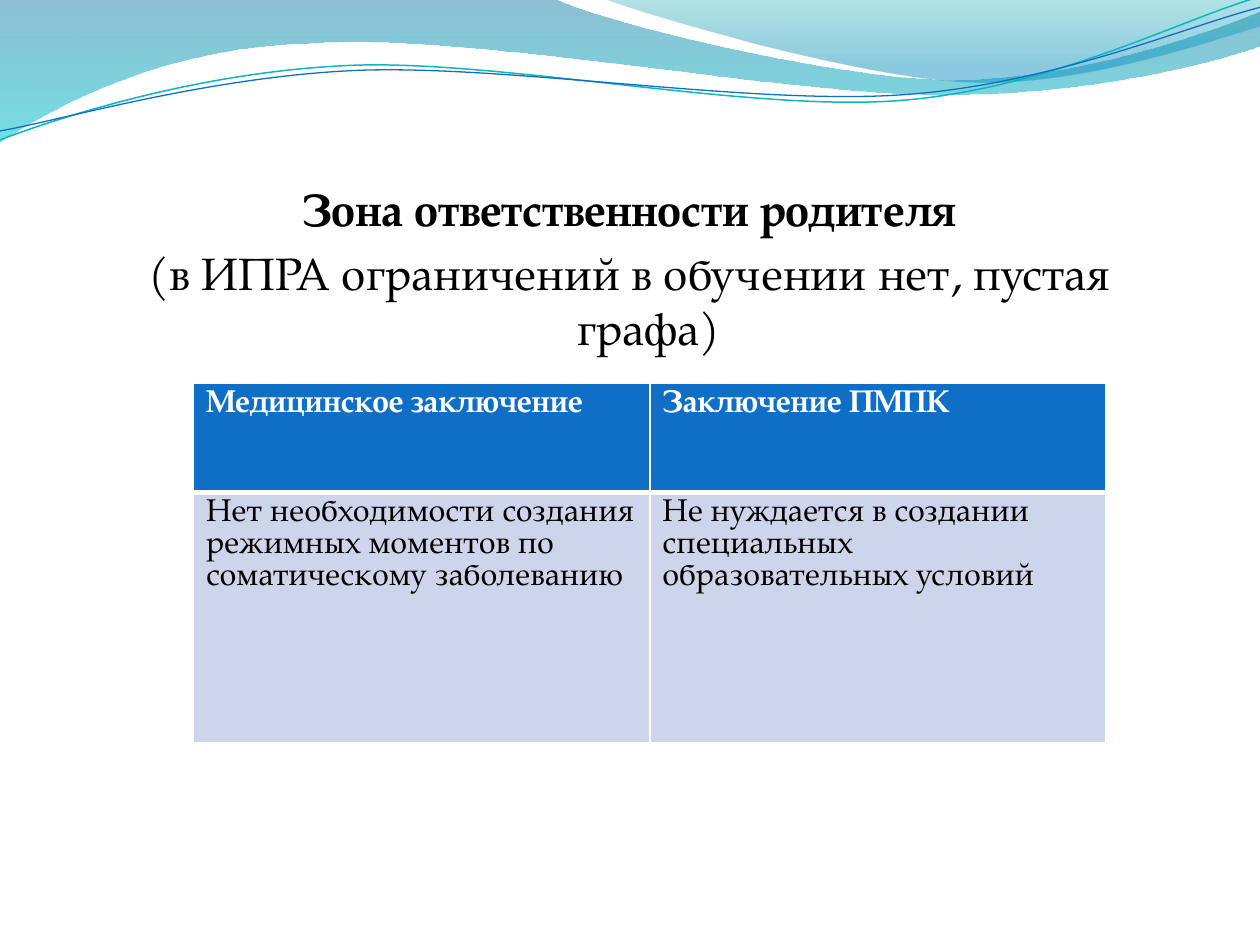
"""Build a slide on the parent's area of responsibility with a two-column table."""
import pptx
import pptx.dml.color
import pptx.enum.text
import pptx.oxml
import pptx.oxml.ns
import pptx.util

Cm = pptx.util.Cm
Pt = pptx.util.Pt
FONT = "TeX Gyre Pagella"
NAMESPACE = pptx.oxml.ns.nsdecls("a")


def color(hex_string):
    return pptx.dml.color.RGBColor.from_string(hex_string)


def style_text(para, size, hex_string, bold):
    for span in para.runs:
        span.font.name = FONT
        span.font.size = Pt(size)
        span.font.bold = bold
        span.font.color.rgb = color(hex_string)


deck = pptx.Presentation()
deck.slide_width = Cm(25.4)
deck.slide_height = Cm(19.05)
page = deck.slides.add_slide(deck.slide_layouts[1])
title = page.shapes.title
title.element.getparent().remove(title.element)

# Each segment holds one point for a straight line or three for a Bezier curve.
band = [
    [(0, 0)],
    [(11.18, -0.03)],
    [(12.09, 0.43), (16.87, 1.6), (19.25, 1.6)],
    [(21.67, 1.6), (24.33, 0.66), (25.4, 0.23)],
    [(25.43, 0.91)],
    [(24.97, 1.12), (22.1, 1.93), (18.95, 1.91)],
    [(15.8, 1.91), (9.7, 0.71), (6.53, 0.86)],
    [(3.28, 0.91), (1.17, 2.11), (-0.03, 2.87)],
]
corner = [
    [(12.17, -0.03)],
    [(12.93, 0.28), (17.32, 1.57), (19.53, 1.65)],
    [(21.74, 1.75), (24.41, 0.81), (25.4, 0.53)],
    [(25.4, 0)],
]
teal_wave = [
    [(0, 2.82)],
    [(1.22, 2.36), (4.01, 1.45), (7.04, 1.32)],
    [(10.03, 1.19), (15.06, 2.26), (18.11, 2.03)],
    [(21.16, 1.8), (23.83, 0.38), (25.35, -0.05)],
]
blue_wave = [
    [(0, 2.64)],
    [(1.19, 2.44), (4.17, 1.55), (7.19, 1.42)],
    [(10.24, 1.3), (15.16, 2.13), (18.21, 1.91)],
    [(21.23, 1.7), (23.9, 0.53), (25.4, 0.15)],
]
decorations = [
    (band, [(0, "0074A1", 45), (100, "00C6CF", 55)], None),
    (corner, [(0, "00A1A9", 30), (80, "008BBF", 45)], None),
    (teal_wave, None, ("0AB8BF", 0.85)),
    (blue_wave, None, ("0F6FC6", 0.75)),
]
for segments, stops, stroke in decorations:
    vertices = [(Cm(segment[-1][0]), Cm(segment[-1][1])) for segment in segments]
    builder = page.shapes.build_freeform(*vertices[0])
    builder.add_line_segments(vertices[1:], close=stops is not None)
    shape = builder.convert_to_shape()
    properties = shape.element.spPr
    pieces = list(properties.iter(pptx.oxml.ns.qn("a:lnTo")))
    for piece, segment in zip(pieces, segments[1:]):
        if len(segment) == 3:
            piece.tag = pptx.oxml.ns.qn("a:cubicBezTo")
            for index, (x, y) in enumerate(segment[:2]):
                piece.insert(index, pptx.oxml.parse_xml(
                    f'<a:pt {NAMESPACE} x="{Cm(x) - shape.left}" y="{Cm(y) - shape.top}"/>'
                ))
    shape.shadow.inherit = False
    shape.fill.background()
    if stops:
        shape.line.fill.background()
        stop_xml = "".join(
            f'<a:gs pos="{position * 1000}"><a:srgbClr val="{shade}">'
            f'<a:alpha val="{opacity * 1000}"/></a:srgbClr></a:gs>'
            for position, shade, opacity in stops
        )
        gradient = pptx.oxml.parse_xml(
            f'<a:gradFill {NAMESPACE} rotWithShape="1"><a:gsLst>{stop_xml}</a:gsLst>'
            '<a:lin ang="5400000" scaled="0"/></a:gradFill>'
        )
        properties.replace(properties.find(pptx.oxml.ns.qn("a:noFill")), gradient)
    else:
        shape.line.color.rgb = color(stroke[0])
        shape.line.width = Pt(stroke[1])

body = page.placeholders[1]
body.left, body.top, body.width, body.height = Cm(1.27), Cm(3.53), Cm(22.86), Cm(14.05)
body.text_frame.text = (
    "Зона ответственности родителя\n(в ИПРА ограничений в обучении нет, пустая графа)"
)
for index, para in enumerate(body.text_frame.paragraphs):
    para.alignment = pptx.enum.text.PP_ALIGN.CENTER
    style_text(para, 26, "000000", index == 0)
    settings = para._p.get_or_add_pPr()
    settings.set("marL", str(Cm(0.76)))
    settings.set("indent", str(Cm(-0.76)))
    settings.append(pptx.oxml.parse_xml(f"<a:buNone {NAMESPACE}/>"))

rows = [
    ("Медицинское заключение", "Заключение ПМПК"),
    (
        "Нет необходимости создания режимных моментов по соматическому заболеванию",
        "Не нуждается в создании специальных образовательных условий",
    ),
]
row_styles = [(2.2, "0F6FC6", "FFFFFF", True, 3), (5.04, "CCD5EA", "000000", False, 1)]
table = page.shapes.add_table(2, 2, Cm(3.9), Cm(7.73), Cm(18.4), Cm(7.24)).table
for row_index, (texts, row_style) in enumerate(zip(rows, row_styles)):
    height, fill, ink, bold, bottom_width = row_style
    table.rows[row_index].height = Cm(height)
    for column_index, text in enumerate(texts):
        cell = table.cell(row_index, column_index)
        cell.text_frame.text = text
        style_text(cell.text_frame.paragraphs[0], 18, ink, bold)
        top_width = 3 if row_index else 1
        borders = [("L", 1), ("R", 1), ("T", top_width), ("B", bottom_width)]
        for side, width in borders:
            cell._tc.get_or_add_tcPr().append(pptx.oxml.parse_xml(
                f'<a:ln{side} {NAMESPACE} w="{Pt(width)}"><a:solidFill>'
                f'<a:srgbClr val="FFFFFF"/></a:solidFill></a:ln{side}>'
            ))
        cell.fill.solid()
        cell.fill.fore_color.rgb = color(fill)

deck.save("out.pptx")
